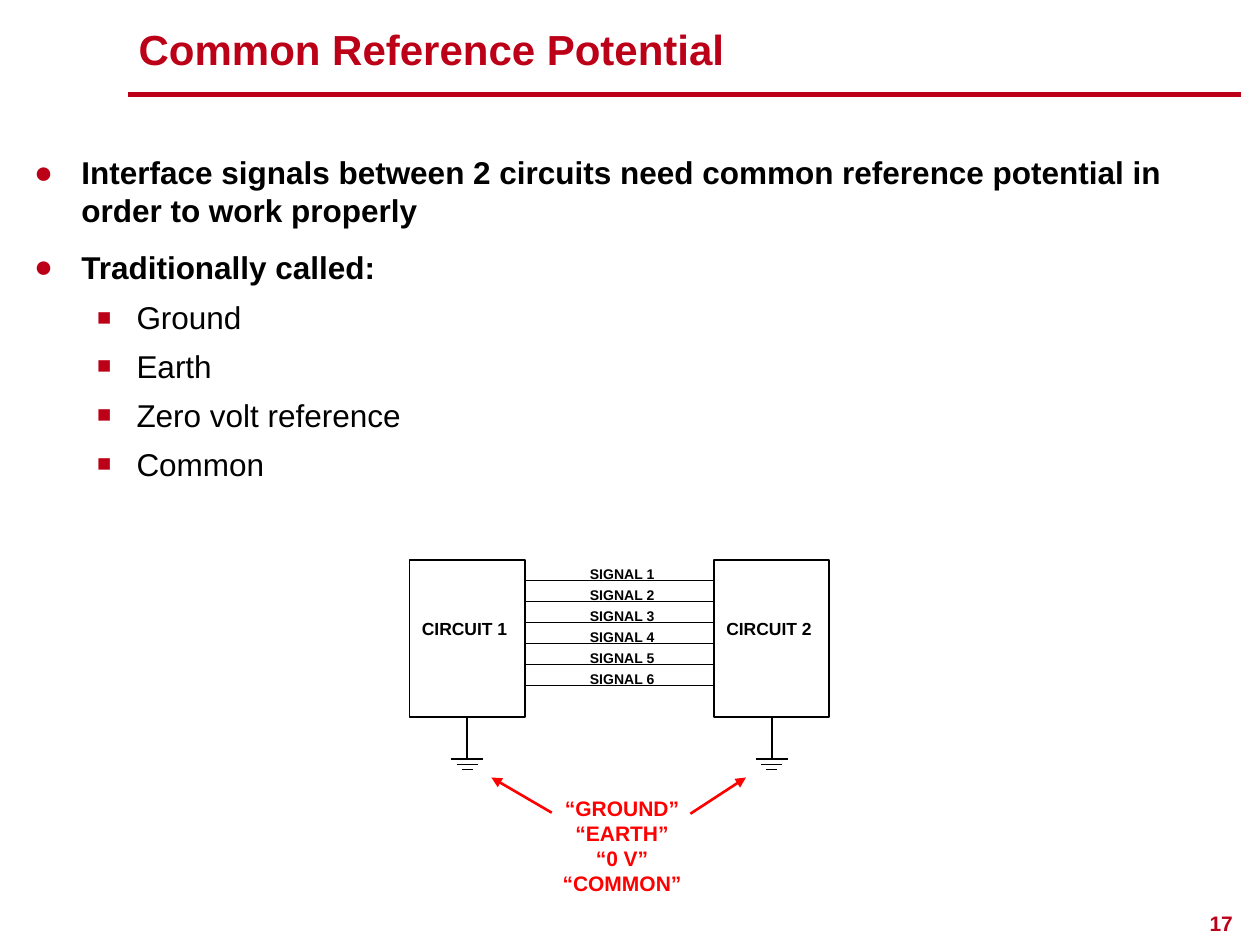
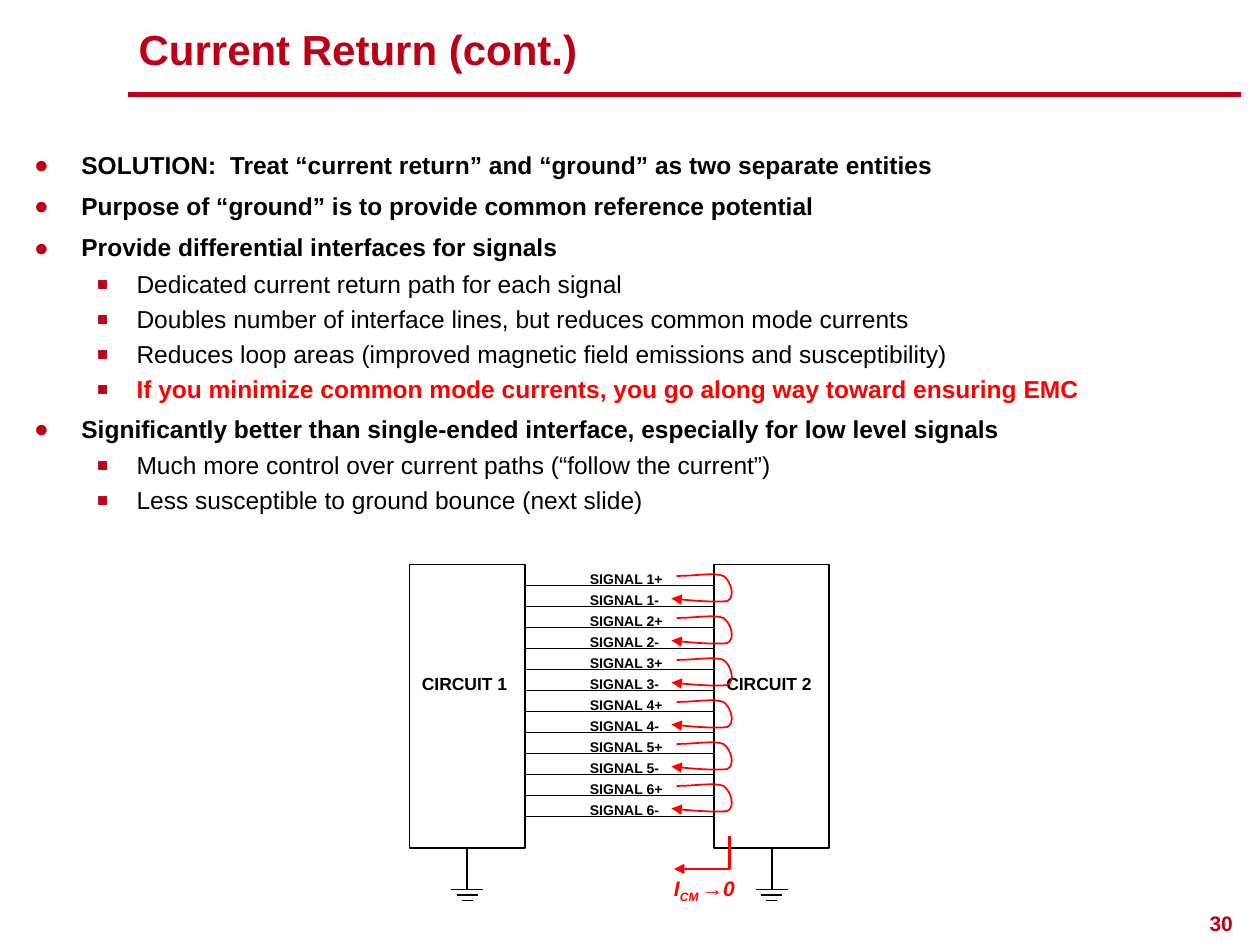
"""Build two slides on common reference potential and current return."""
from dataclasses import dataclass

from lxml import etree
from pptx import Presentation
from pptx.dml.color import RGBColor
from pptx.enum.shapes import MSO_CONNECTOR, MSO_SHAPE
from pptx.enum.text import MSO_ANCHOR, MSO_AUTO_SIZE, PP_ALIGN
from pptx.oxml.ns import qn
from pptx.util import Emu, Pt

SCALE = 3810
FONT = "Arial"
CRIMSON, RED, BLACK = "BB0018", "FF0000", "000000"
STRAIGHT, RECTANGLE = MSO_CONNECTOR.STRAIGHT, MSO_SHAPE.RECTANGLE
LEFT, CENTER, RIGHT = PP_ALIGN.LEFT, PP_ALIGN.CENTER, PP_ALIGN.RIGHT
MIDDLE, TOP, FIXED = MSO_ANCHOR.MIDDLE, MSO_ANCHOR.TOP, MSO_AUTO_SIZE.NONE

CIRCUIT_LEFTS = (780, 1360)
CIRCUIT_WIDTH = 220
SIGNAL_PITCH = 40
LOOP = (
    (1289, 22),
    (1325, 22), (1361, 15), (1378, 22),
    (1392, 31), (1402, 63), (1385, 70),
    (1366, 72), (1322, 70), (1279, 65),
)


@dataclass(frozen=True)
class Span:
    """A run of text with its own style."""

    text: str
    color: str = BLACK
    bold: bool = True
    italic: bool = False
    baseline: int = 0


@dataclass(frozen=True)
class BulletStyle:
    """The look of one list level."""

    mark: str
    percent: int
    margin: int
    hanging: int
    before: float
    after: float


@dataclass(frozen=True)
class Item:
    """One line of the list."""

    text: str
    level: int = 0
    color: str = BLACK
    bold: bool = False


@dataclass(frozen=True)
class Topic:
    """The title, list and number of one slide."""

    title: str
    number: str
    items: tuple[Item, ...]
    size: int
    spacing: float
    height: int


@dataclass(frozen=True)
class Diagram:
    """Two circuits joined by signal lines."""

    top: int
    height: int
    label_offset: int
    signals: tuple[str, ...]


BULLETS = (
    BulletStyle("●", 100, 90, 90, 0.2, 0.4),
    BulletStyle("■", 75, 195, 75, 0, 0.35),
)

REFERENCE = Topic(
    "Common Reference Potential", "17",
    (
        Item("Interface signals between 2 circuits need common reference "
             "potential in order to work properly"),
        Item("Traditionally called:"),
        Item("Ground", 1),
        Item("Earth", 1),
        Item("Zero volt reference", 1),
        Item("Common", 1),
    ),
    18, 1.0, 520,
)
RETURN = Topic(
    "Current Return (cont.)", "30",
    (
        Item("SOLUTION:  Treat “current return” and “ground” as two separate entities"),
        Item("Purpose of “ground” is to provide common reference potential"),
        Item("Provide differential interfaces for signals"),
        Item("Dedicated current return path for each signal", 1),
        Item("Doubles number of interface lines, but reduces common mode currents", 1),
        Item("Reduces loop areas (improved magnetic field emissions and susceptibility)", 1),
        Item("If you minimize common mode currents, you go along way toward ensuring EMC",
             1, RED, True),
        Item("Significantly better than single-ended interface, especially for low level signals"),
        Item("Much more control over current paths (“follow the current”)", 1),
        Item("Less susceptible to ground bounce (next slide)", 1),
    ),
    14, 0.9, 756,
)
SINGLE_ENDED = Diagram(1066, 300, 100, tuple(f"SIGNAL {number}" for number in range(1, 7)))
DIFFERENTIAL = Diagram(
    1075, 540, 196,
    tuple(f"SIGNAL {number}{sign}" for number in range(1, 7) for sign in "+-"),
)


def px(length: int) -> Emu:
    """Turn px into EMU."""
    return Emu(length * SCALE)


def rgb(color: str) -> RGBColor:
    """Turn a hex string into a colour."""
    return RGBColor.from_string(color)


def write_span(para, span: Span, size: int) -> None:
    """Add one styled run to a paragraph."""
    run = para.add_run()
    run.text = span.text
    font = run.font
    font.name, font.size = FONT, Pt(size)
    font.bold, font.italic = span.bold, span.italic
    font.color.rgb = rgb(span.color)
    if span.baseline:
        font._element.set("baseline", str(span.baseline * 1000))


def write_lines(frame, lines, size: int, align=LEFT, spacing: float = 1.0) -> None:
    """Write one paragraph for each tuple of spans."""
    for index, spans in enumerate(lines):
        para = frame.paragraphs[0] if index == 0 else frame.add_paragraph()
        para.alignment, para.line_spacing = align, spacing
        for span in spans:
            write_span(para, span, size)


def add_text(page, bounds, lines, size: int, align=LEFT, spacing: float = 1.0) -> None:
    """Add a text box."""
    box = page.shapes.add_textbox(*map(px, bounds))
    box.text_frame.word_wrap = True
    write_lines(box.text_frame, lines, size, align, spacing)


def style_line(shape, color: str, width: float, arrow: bool) -> None:
    """Set the line of a shape or connector, with an arrowhead if asked."""
    shape.line.color.rgb = rgb(color)
    shape.line.width = Pt(width)
    if arrow:
        outline = shape.element.spPr.find(qn("a:ln"))
        etree.SubElement(outline, qn("a:tailEnd"), type="triangle")


def add_line(page, start, end, color: str = BLACK, width: float = 0.75,
             arrow: bool = False) -> None:
    """Draw a straight line."""
    line = page.shapes.add_connector(STRAIGHT, *map(px, (*start, *end)))
    style_line(line, color, width, arrow)
    etree.SubElement(line.element.spPr, qn("a:effectLst"))


def add_arrow_path(page, points, width: float):
    """Draw an open red path that ends in an arrowhead."""
    start, *others = [(px(x), px(y)) for x, y in points]
    builder = page.shapes.build_freeform(*start)
    builder.add_line_segments(others, close=False)
    outline = builder.convert_to_shape()
    outline.shadow.inherit = False
    outline.fill.background()
    style_line(outline, RED, width, True)
    return outline


def add_loop(page, top: int) -> None:
    """Draw the curved return loop of one signal pair."""
    loop = add_arrow_path(page, [(x, y + top) for x, y in LOOP], 1)
    segments = list(loop.element.iter(qn("a:lnTo")))
    for first in range(0, len(segments), 3):
        curve = etree.SubElement(segments[first].getparent(), qn("a:cubicBezTo"))
        for segment in segments[first:first + 3]:
            curve.append(segment[0])
            segment.getparent().remove(segment)


def place(holder, bounds, anchor):
    """Move a placeholder and return its text frame."""
    holder.left, holder.top, holder.width, holder.height = map(px, bounds)
    frame = holder.text_frame
    frame.auto_size, frame.vertical_anchor, frame.word_wrap = FIXED, anchor, True
    return frame


def set_bullet(para, style: BulletStyle) -> None:
    """Give a paragraph its indent and bullet."""
    properties = para._p.get_or_add_pPr()
    properties.set("marL", str(px(style.margin)))
    properties.set("indent", str(px(-style.hanging)))
    color = etree.SubElement(properties, qn("a:buClr"))
    etree.SubElement(color, qn("a:srgbClr"), val=CRIMSON)
    etree.SubElement(properties, qn("a:buSzPct"), val=str(style.percent * 1000))
    etree.SubElement(properties, qn("a:buChar"), char=style.mark)


def add_page(deck, topic: Topic):
    """Add a slide with its title, rule, number and list."""
    page = deck.slides.add_slide(deck.slide_layouts[1])
    add_text(page, (2274, 1728, 98, 68), [(Span(topic.number, CRIMSON),)], 12, RIGHT, 0.9)
    add_line(page, (243, 180), (2363, 180), CRIMSON, 3)
    title = place(page.shapes.title, (240, 40, 1904, 106), MIDDLE)
    write_lines(title, [(Span(topic.title, CRIMSON),)], 24)
    body = place(page.placeholders[1], (41, 280, 2308, topic.height), TOP)
    lines = [(Span(item.text, item.color, item.bold or item.level == 0),)
             for item in topic.items]
    write_lines(body, lines, topic.size, LEFT, topic.spacing)
    for index, (para, item) in enumerate(zip(body.paragraphs, topic.items)):
        style = BULLETS[item.level]
        para.level = item.level
        set_bullet(para, style)
        para.space_before = Pt(style.before * topic.size if index else 0)
        para.space_after = Pt(style.after * topic.size)
    return page


def add_ground(page, x: int, top: int) -> None:
    """Draw a ground symbol hanging from a circuit."""
    add_line(page, (x, top), (x, top + 80), width=1)
    for step, half in enumerate((30, 20, 10)):
        y = top + 80 + 10 * step
        add_line(page, (x - half, y), (x + half, y))


def add_diagram(page, diagram: Diagram) -> None:
    """Draw both circuits, their grounds and the signals between them."""
    for number, left in enumerate(CIRCUIT_LEFTS, 1):
        bounds = (left, diagram.top, CIRCUIT_WIDTH, diagram.height)
        circuit = page.shapes.add_shape(RECTANGLE, *map(px, bounds))
        circuit.shadow.inherit = False
        circuit.fill.background()
        style_line(circuit, BLACK, 1, False)
        label = (left, diagram.top + diagram.label_offset, 240, 64)
        add_text(page, label, [(Span(f"CIRCUIT {number}"),)], 10)
        add_ground(page, left + CIRCUIT_WIDTH // 2, diagram.top + diagram.height)
    for index, signal in enumerate(diagram.signals):
        top = diagram.top + SIGNAL_PITCH * index
        y = top + SIGNAL_PITCH
        add_line(page, (CIRCUIT_LEFTS[0] + CIRCUIT_WIDTH, y), (CIRCUIT_LEFTS[1], y))
        add_text(page, (1100, top, 220, 58), [(Span(signal),)], 8)


def main() -> None:
    """Build and save the deck."""
    deck = Presentation()
    deck.slide_width, deck.slide_height = px(2400), px(1800)

    page = add_page(deck, REFERENCE)
    add_diagram(page, SINGLE_ENDED)
    names = ("“GROUND”", "“EARTH”", "“0 V”", "“COMMON”")
    add_text(page, (1046, 1503, 278, 218), [(Span(name, RED),) for name in names], 12, CENTER)
    add_line(page, (1315, 1550), (1421, 1481), RED, 1.5, True)
    add_line(page, (1051, 1548), (936, 1481), RED, 1.5, True)

    page = add_page(deck, RETURN)
    add_diagram(page, DIFFERENTIAL)
    for pair in range(len(DIFFERENTIAL.signals) // 2):
        add_loop(page, DIFFERENTIAL.top + 2 * SIGNAL_PITCH * pair)
    add_arrow_path(page, ((1390, 1592), (1390, 1655), (1284, 1655)), 1.5)
    current = (Span("I", RED, italic=True), Span("CM ", RED, italic=True, baseline=-25),
               Span("→", RED), Span("0", RED, italic=True))
    add_text(page, (1260, 1656, 200, 72), [current], 12)

    deck.save("out.pptx")


if __name__ == "__main__":
    main()
